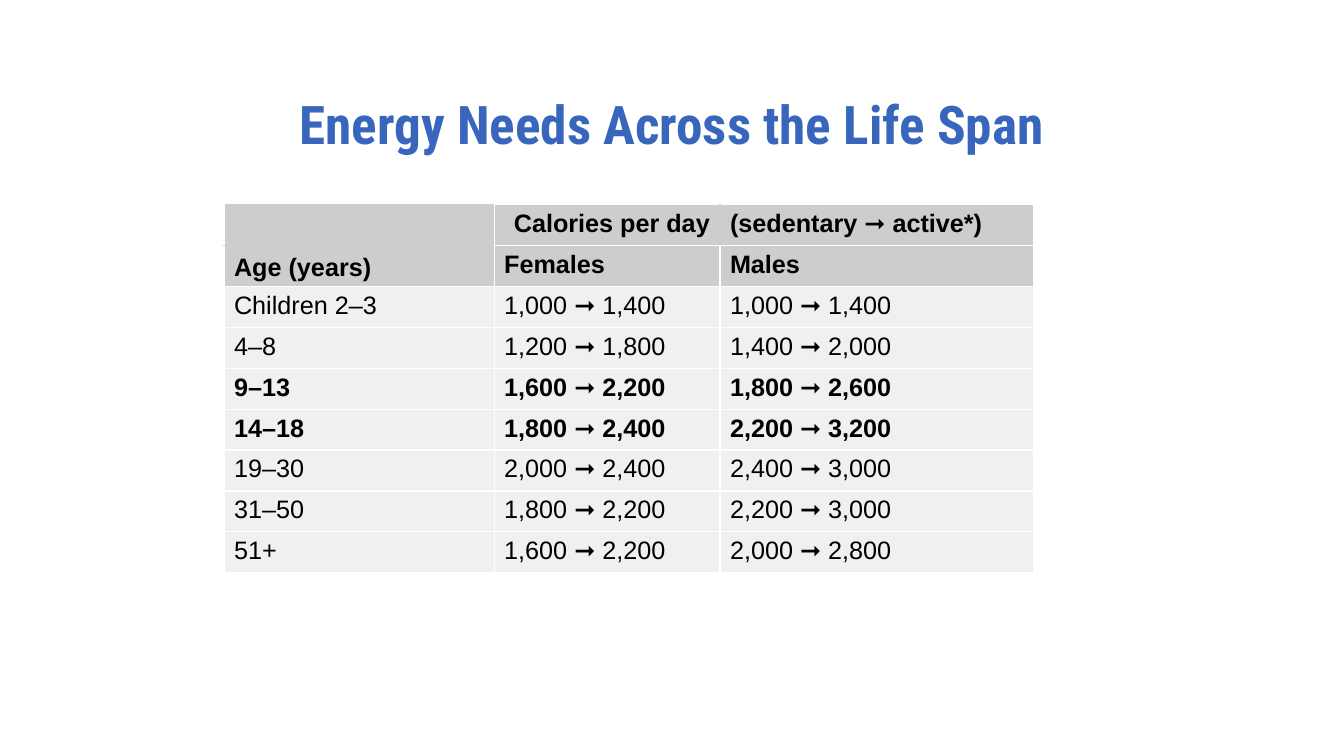
"""Build a slide with a table of daily energy needs by age and sex."""
from lxml.etree import SubElement
from pptx import Presentation
from pptx.dml.color import RGBColor
from pptx.enum.text import MSO_ANCHOR as Anchor, MSO_AUTO_SIZE as Fit, PP_ALIGN as Align
from pptx.oxml.ns import qn
from pptx.util import Pt

BLUE = RGBColor(0x37, 0x66, 0xBC)
BLACK = RGBColor(0, 0, 0)
WHITE = RGBColor(0xFF, 0xFF, 0xFF)
GRAY = RGBColor(0xCD, 0xCD, 0xCD)
PALE = RGBColor(0xF0, 0xF0, 0xF0)

ROWS = [
    ("", "Calories per day", "(sedentary ➞ active*)"),
    ("Age (years)", "Females", "Males"),
    ("Children 2–3", "1,000 ➞ 1,400", "1,000 ➞ 1,400"),
    ("4–8", "1,200 ➞ 1,800", "1,400 ➞ 2,000"),
    ("9–13", "1,600 ➞ 2,200", "1,800 ➞ 2,600"),
    ("14–18", "1,800 ➞ 2,400", "2,200 ➞ 3,200"),
    ("19–30", "2,000 ➞ 2,400", "2,400 ➞ 3,000"),
    ("31–50", "1,800 ➞ 2,200", "2,200 ➞ 3,000"),
    ("51+", "1,600 ➞ 2,200", "2,000 ➞ 2,800"),
]
WIDTHS = [193, 161.3, 223.9]
HEIGHT = 29.2
HEADS = 2
BOLD = {0, 1, 4, 5}
JOINED = {(0, 0): "TB", (1, 0): "T", (0, 1): "R", (0, 2): "L"}


def set_font(para, name, size, color, bold):
    """Format the whole paragraph."""
    font = para.font
    font.name, font.size, font.bold = name, Pt(size), bold
    font.color.rgb = color


def add_title(slide, text):
    """Place and format the title."""
    title = slide.shapes.title
    title.left, title.top, title.width, title.height = Pt(0), Pt(64), Pt(960), Pt(54)
    frame = title.text_frame
    frame.text = text
    frame.word_wrap, frame.auto_size = True, Fit.NONE
    frame.vertical_anchor = Anchor.MIDDLE
    frame.margin_left = frame.margin_right = Pt(0)
    frame.margin_top = frame.margin_bottom = Pt(0)
    para = frame.paragraphs[0]
    para.alignment, para.line_spacing = Align.CENTER, 0.9
    set_font(para, "Roboto Condensed", 38, BLUE, True)


def set_edges(cell, joined):
    """Draw white borders, hiding those on the joined sides."""
    props = cell._tc.get_or_add_tcPr()
    for side in "LRTB":
        line = SubElement(props, qn(f"a:ln{side}"), w=str(Pt(1)))
        fill = SubElement(line, qn("a:solidFill"))
        color = GRAY if side in joined else WHITE
        SubElement(fill, qn("a:srgbClr"), val=str(color))


def fill_cell(cell, text, row, col):
    """Write one cell with its fill and borders."""
    cell.text = text
    set_edges(cell, JOINED.get((row, col), ""))
    cell.fill.solid()
    cell.fill.fore_color.rgb = GRAY if row < HEADS else PALE
    set_font(cell.text_frame.paragraphs[0], "Arial", 18, BLACK, row in BOLD)


def add_grid(slide):
    """Add the table of energy needs."""
    frame = slide.shapes.add_table(
        len(ROWS), len(WIDTHS), Pt(160), Pt(146.3),
        Pt(sum(WIDTHS)), Pt(HEIGHT * len(ROWS)))
    table = frame.table
    table.first_row = table.horz_banding = False
    for column, width in zip(table.columns, WIDTHS):
        column.width = Pt(width)
    for row, texts in enumerate(ROWS):
        table.rows[row].height = Pt(HEIGHT)
        for col, text in enumerate(texts):
            fill_cell(table.cell(row, col), text, row, col)
    table.cell(0, 1).text_frame.paragraphs[0].alignment = Align.RIGHT
    table.cell(1, 0).vertical_anchor = Anchor.BOTTOM


def main():
    """Build and save the slide."""
    deck = Presentation()
    deck.slide_width, deck.slide_height = Pt(960), Pt(540)
    slide = deck.slides.add_slide(deck.slide_layouts[5])
    add_grid(slide)
    add_title(slide, "Energy Needs Across the Life Span")
    deck.save("out.pptx")


if __name__ == "__main__":
    main()
